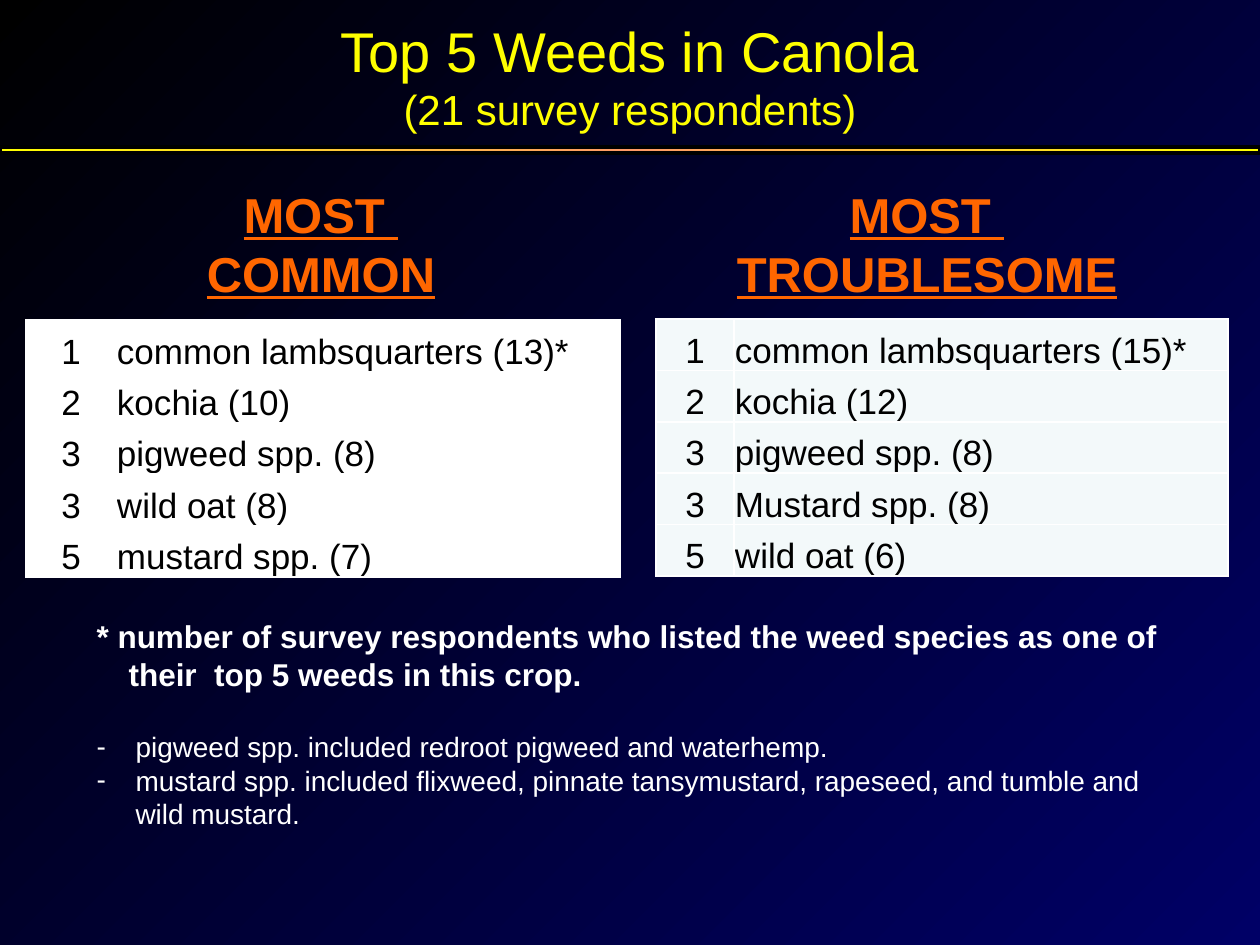
import copy
import pptx
import pptx.util
import pptx.dml.color
import pptx.enum.shapes
import pptx.enum.text
import pptx.oxml
import pptx.oxml.ns

EMU_PER_PX = 914400 / 126
COLORS = {
    "title": "FFFF00", "heading": "FF6600", "note": "FFFFFF", "ink": "000000",
    "common": "FFFFFF", "troublesome": "F3F9FA", "border": "FFFFFF",
    "night": "000000", "navy": "000066", "glow": "FF9966",
}
ALIGN = pptx.enum.text.PP_ALIGN
ANCHOR = pptx.enum.text.MSO_ANCHOR


def px(*lengths):
    return [pptx.util.Emu(round(length * EMU_PER_PX)) for length in lengths]


def write(paragraph, text, size, color, align=ALIGN.LEFT, bold=False, underline=False):
    paragraph.alignment = align
    run = paragraph.add_run()
    run.text = text
    run.font.name = "Arial"
    run.font.size = pptx.util.Pt(size)
    run.font.bold = bold
    run.font.underline = underline
    run.font.color.rgb = pptx.dml.color.RGBColor.from_string(COLORS[color])


deck = pptx.Presentation()
deck.slide_width, deck.slide_height = px(1260, 945)
slide = deck.slides.add_slide(deck.slide_layouts[1])

backdrop = slide.background.fill
backdrop.gradient()
backdrop.gradient_angle = 315
for stop, color in zip(backdrop.gradient_stops, ("night", "navy")):
    stop.color.rgb = pptx.dml.color.RGBColor.from_string(COLORS[color])

title = slide.shapes.title
title.left, title.top, title.width, title.height = px(42, 0, 1176, 151)
title.text_frame.auto_size = pptx.enum.text.MSO_AUTO_SIZE.NONE
title.text_frame.vertical_anchor = ANCHOR.MIDDLE
write(title.text_frame.paragraphs[0], "Top 5 Weeds in Canola", 32, "title", ALIGN.CENTER)
write(title.text_frame.add_paragraph(), "(21 survey respondents)", 24, "title", ALIGN.CENTER)

rankings = [
    ("COMMON", "common", (170, 178, 302, 131), (26, 320, 594, 257), (90, 504),
     [("1", "common lambsquarters (13)*"), ("2", "kochia (10)"), ("3", "pigweed spp. (8)"),
      ("3", "wild oat (8)"), ("5", "mustard spp. (7)")]),
    ("TROUBLESOME", "troublesome", (722, 178, 410, 131), (656, 319, 572, 257), (78, 494),
     [("1", "common lambsquarters (15)*"), ("2", "kochia (12)"), ("3", "pigweed spp. (8)"),
      ("3", "Mustard spp. (8)"), ("5", "wild oat (6)")]),
]
for label, cell_color, heading_box, ranking_box, widths, weeds in rankings:
    heading = slide.shapes.add_textbox(*px(*heading_box)).text_frame
    heading.word_wrap = True
    write(heading.paragraphs[0], "MOST ", 28, "heading", ALIGN.CENTER, True, True)
    write(heading.add_paragraph(), label, 28, "heading", ALIGN.CENTER, True, True)

    ranking = slide.shapes.add_table(len(weeds), 2, *px(*ranking_box)).table
    ranking.first_row = ranking.horz_banding = False
    for column, width in zip(ranking.columns, px(*widths)):
        column.width = width
    for row, weed in enumerate(weeds):
        for col, (text, align) in enumerate(zip(weed, (ALIGN.CENTER, ALIGN.LEFT))):
            cell = ranking.cell(row, col)
            cell.vertical_anchor = ANCHOR.BOTTOM
            cell.margin_left, cell.margin_right, cell.margin_top, cell.margin_bottom = px(1, 1, 1, 0)
            write(cell.text_frame.paragraphs[0], text, 20, "ink", align)
            borders = cell._tc.get_or_add_tcPr()
            for side in ("lnL", "lnR", "lnT", "lnB"):
                borders.append(pptx.oxml.parse_xml(
                    f'<a:{side} {pptx.oxml.ns.nsdecls("a")} w="12700"><a:solidFill>'
                    f'<a:srgbClr val="{COLORS["border"]}"/></a:solidFill></a:{side}>'))
            cell.fill.solid()
            cell.fill.fore_color.rgb = pptx.dml.color.RGBColor.from_string(COLORS[cell_color])

notes = slide.placeholders[1]
notes.left, notes.top, notes.width, notes.height = px(84, 611, 1113, 229)
notes.text_frame.auto_size = pptx.enum.text.MSO_AUTO_SIZE.NONE
footnotes = [
    ("* number of survey respondents who listed the weed species as one of their  top 5 weeds in this crop.",
     18, True, 32, 0, None),
    ("pigweed spp. included redroot pigweed and waterhemp.", 16, False, 39, 21, "-"),
    ("mustard spp. included flixweed, pinnate tansymustard, rapeseed, and tumble and wild mustard.",
     16, False, 39, 0, "-"),
]
for index, (text, size, bold, indent, gap, bullet) in enumerate(footnotes):
    paragraph = notes.text_frame.add_paragraph() if index else notes.text_frame.paragraphs[0]
    write(paragraph, text, size, "note", bold=bold)
    paragraph.space_before = pptx.util.Pt(gap)
    properties = paragraph._p.get_or_add_pPr()
    hanging, = px(indent)
    properties.set("marL", str(hanging))
    properties.set("indent", str(-hanging))
    mark = f'buChar char="{bullet}"' if bullet else "buNone"
    properties.append(pptx.oxml.parse_xml(f'<a:{mark} {pptx.oxml.ns.nsdecls("a")}/>'))

divider = slide.shapes.add_shape(pptx.enum.shapes.MSO_SHAPE.RECTANGLE, *px(0, 147, 1260, 6))
divider.shadow.inherit = False
divider.line.color.rgb = pptx.dml.color.RGBColor.from_string(COLORS["ink"])
divider.line.width = pptx.util.Pt(2.25)
divider.fill.gradient()
divider.fill.gradient_angle = 0
stops = divider._element.spPr.find(".//" + pptx.oxml.ns.qn("a:gsLst"))
stops.append(copy.deepcopy(stops[0]))
for stop, color, position in zip(divider.fill.gradient_stops, ("title", "glow", "title"), (0, 0.5, 1)):
    stop.color.rgb = pptx.dml.color.RGBColor.from_string(COLORS[color])
    stop.position = position

deck.save("out.pptx")
